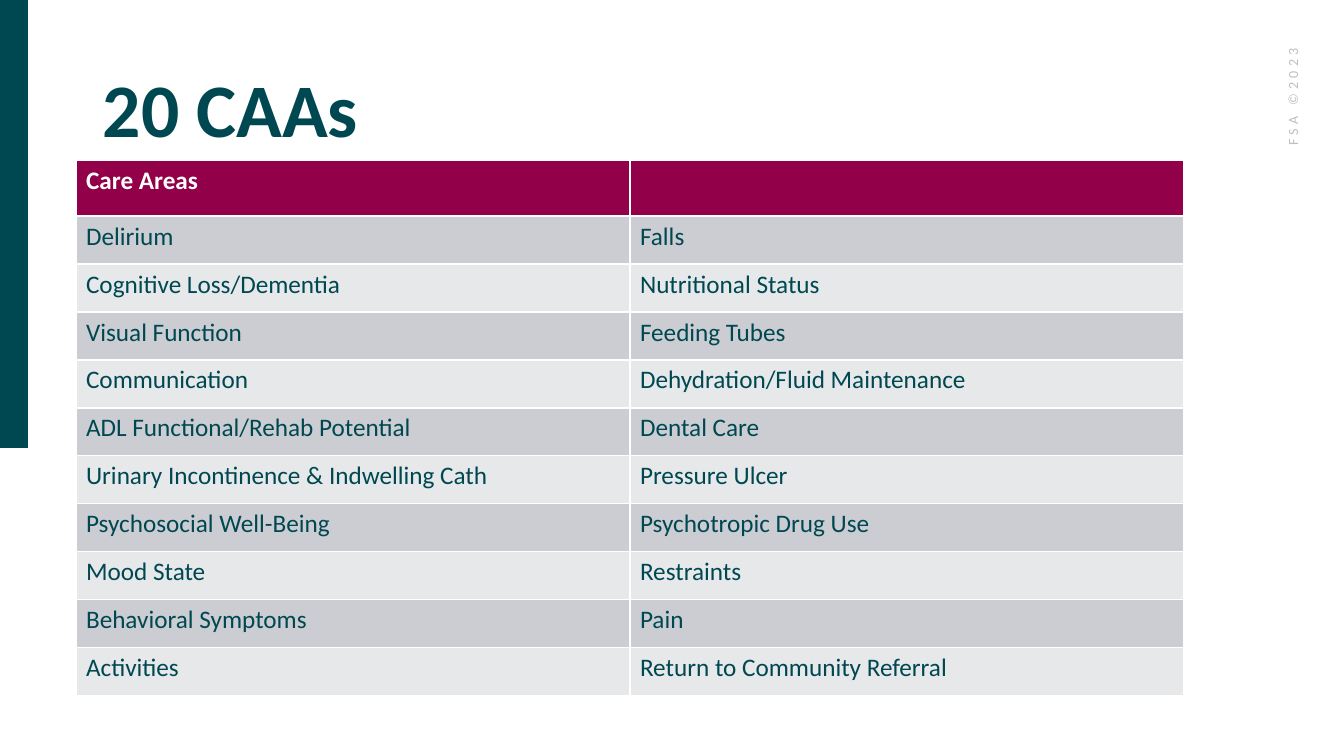
"""Build the "20 CAAs" slide: a two-column table of care areas."""
from dataclasses import dataclass

import pptx
import pptx.dml.color
import pptx.enum.shapes
import pptx.enum.text
import pptx.util


@dataclass(frozen=True)
class Theme:
    font: str = "Calibri"
    teal: str = "004851"
    plum: str = "910048"
    white: str = "FFFFFF"
    credit: str = "BFBFBF"
    bands: tuple = ("CCCDD2", "E7E8EA")
    title_pt: int = 54
    table_pt: int = 18
    credit_pt: int = 10


theme = Theme()
SLIDE_W, SLIDE_H = 1344, 756
SCALE = 12192000 / SLIDE_W
HEADER_H, ROW_H, COL_W = 56, 48, 554
CARE_AREAS = [
    ("Care Areas", ""),
    ("Delirium", "Falls"),
    ("Cognitive Loss/Dementia", "Nutritional Status"),
    ("Visual Function", "Feeding Tubes"),
    ("Communication", "Dehydration/Fluid Maintenance"),
    ("ADL Functional/Rehab Potential", "Dental Care"),
    ("Urinary Incontinence & Indwelling Cath", "Pressure Ulcer"),
    ("Psychosocial Well-Being", "Psychotropic Drug Use"),
    ("Mood State", "Restraints"),
    ("Behavioral Symptoms", "Pain"),
    ("Activities", "Return to Community Referral"),
]


def px(*lengths):
    return [pptx.util.Emu(round(n * SCALE)) for n in lengths]


def write(tf, text, size, color, bold=False):
    p = tf.paragraphs[0]
    p.text = text
    p.font.name = theme.font
    p.font.size = pptx.util.Pt(size)
    p.font.bold = bold
    p.font.color.rgb = pptx.dml.color.RGBColor.from_string(color)
    return p


prs = pptx.Presentation()
prs.slide_width, prs.slide_height = px(SLIDE_W, SLIDE_H)
s = prs.slides.add_slide(prs.slide_layouts[6])

credit = s.shapes.add_textbox(*px(1113, 206, 361, 26))
credit.rotation = 270
tf = credit.text_frame
tf.word_wrap = True
tf.vertical_anchor = pptx.enum.text.MSO_ANCHOR.MIDDLE
p = write(tf, "FSA ©2023", theme.credit_pt, theme.credit)
p.alignment = pptx.enum.text.PP_ALIGN.RIGHT
p.line_spacing = 0.9
p.runs[0].font._element.set("spc", "300")

bar = s.shapes.add_shape(pptx.enum.shapes.MSO_SHAPE.RECTANGLE, *px(0, 0, 28, 448))
bar.shadow.inherit = False
bar.fill.solid()
bar.fill.fore_color.rgb = pptx.dml.color.RGBColor.from_string(theme.teal)
bar.line.fill.background()

title = s.shapes.add_textbox(*px(93, 40, 1159, 146))
tf = title.text_frame
tf.word_wrap = True
tf.vertical_anchor = pptx.enum.text.MSO_ANCHOR.MIDDLE
p = write(tf, "20 CAAs", theme.title_pt, theme.teal, bold=True)
p.line_spacing = 0.9

table_h = HEADER_H + ROW_H * (len(CARE_AREAS) - 1)
table = s.shapes.add_table(
    len(CARE_AREAS), 2, *px(76, 160, 2 * COL_W, table_h)
).table
for column in table.columns:
    column.width = px(COL_W)[0]
for i, areas in enumerate(CARE_AREAS):
    header = i == 0
    table.rows[i].height = px(HEADER_H if header else ROW_H)[0]
    fill = theme.plum if header else theme.bands[(i - 1) % 2]
    color = theme.white if header else theme.teal
    for j, area in enumerate(areas):
        cell = table.cell(i, j)
        cell.fill.solid()
        cell.fill.fore_color.rgb = pptx.dml.color.RGBColor.from_string(fill)
        write(cell.text_frame, area, theme.table_pt, color, bold=header)

prs.save("out.pptx")
